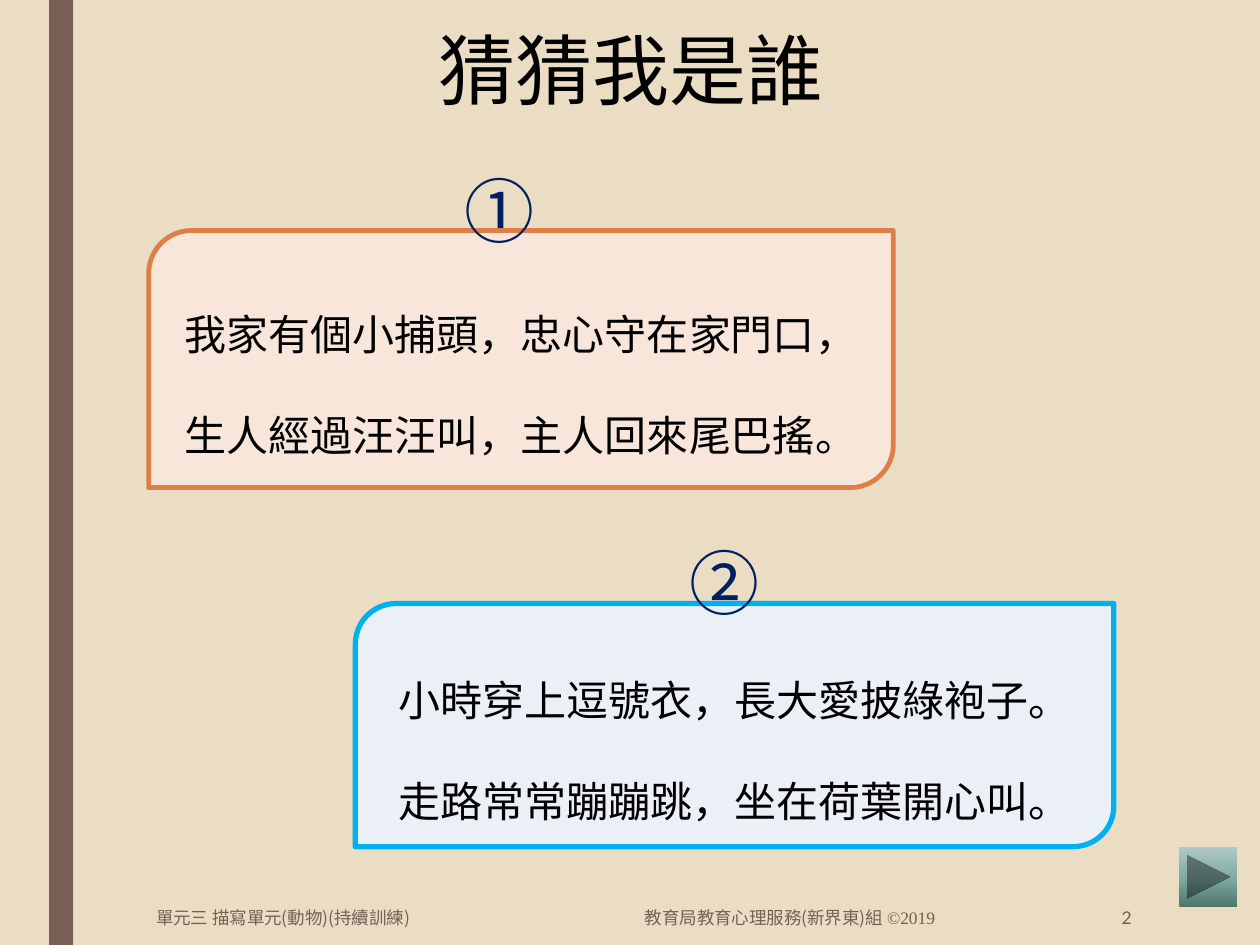
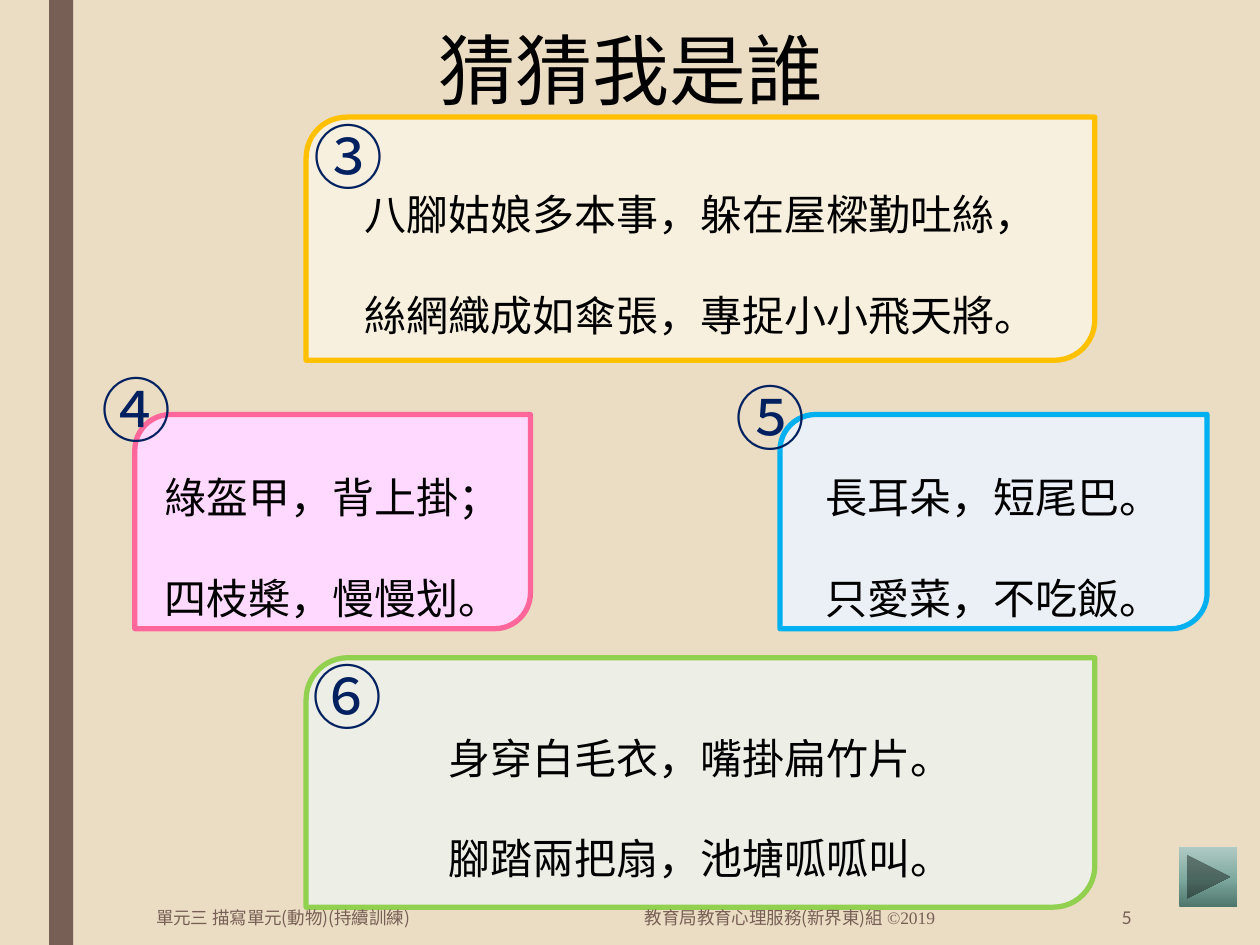
import copy
from dataclasses import dataclass

import pptx
import pptx.dml.color
import pptx.enum.shapes
import pptx.enum.text
import pptx.oxml.ns
import pptx.util
from lxml import etree

SHAPES = pptx.enum.shapes.MSO_SHAPE
ALIGN = pptx.enum.text.PP_ALIGN
ANCHOR = pptx.enum.text.MSO_ANCHOR
QN = pptx.oxml.ns.qn

# The slide is a grid of 100 columns by 75 rows of square cells.
COLUMNS, ROWS = 100, 75
CELL = pptx.util.Inches(0.1)


@dataclass(frozen=True)
class Theme:
    background: str = "EBDDC3"
    brown: str = "775F55"
    ink: str = "000000"
    navy: str = "002060"
    button: tuple = ((0, "4E756C"), (0.48, "7FAAA0"), (1, "B0CAC4"))
    # Card styles: fill, line
    orange: tuple = ("F8E6DA", "DD8047")
    blue: tuple = ("EAF0F6", "00B0F0")
    yellow: tuple = ("F7F0DE", "FFC000")
    pink: tuple = ("FFD9FF", "FF6699")
    green: tuple = ("EDEEE6", "92D050")
    chinese: str = "Noto Sans CJK SC"
    digits: str = "Lato"
    serif: str = "Times New Roman"
    title_size: int = 44
    number_size: int = 40
    riddle_size: int = 24
    footer_size: int = 10


THEME = Theme()


@dataclass(frozen=True)
class Riddle:
    number: str
    number_at: tuple
    card_at: tuple
    style: tuple
    lines: tuple
    line_width: float = 3


RIDDLES = {
    2: (
        Riddle("①", (35.9, 12.8), (11.8, 18.3, 59.1, 20.4), THEME.orange,
               ("我家有個小捕頭，忠心守在家門口，",
                "生人經過汪汪叫，主人回來尾巴搖。"), 2.75),
        Riddle("②", (53.7, 42.3), (28.2, 47.9, 60.2, 19.3), THEME.blue,
               ("小時穿上逗號衣，長大愛披綠袍子。",
                "走路常常蹦蹦跳，坐在荷葉開心叫。")),
    ),
    5: (
        Riddle("③", (23.9, 8.5), (24.3, 9.3, 62.6, 19.3), THEME.yellow,
               ("八腳姑娘多本事，躲在屋樑勤吐絲，",
                "絲網織成如傘張，專捉小小飛天將。")),
        Riddle("④", (7.1, 28.6), (10.7, 32.9, 31.4, 17), THEME.pink,
               ("綠盔甲，背上掛；", "四枝槳，慢慢划。")),
        Riddle("⑤", (57.4, 29.2), (61.9, 32.9, 33.9, 17), THEME.blue,
               ("長耳朵，短尾巴。", "只愛菜，不吃飯。")),
        Riddle("⑥", (23.8, 51.4), (24.3, 52.2, 62.6, 19.8), THEME.green,
               ("身穿白毛衣，嘴掛扁竹片。",
                "腳踏兩把扇，池塘呱呱叫。")),
    ),
}


def color(code):
    return pptx.dml.color.RGBColor.from_string(code)


def place(area):
    return [round(cells * CELL) for cells in area]


def write(box, lines, *, size, ink=THEME.ink, font=THEME.chinese,
          align=ALIGN.LEFT, anchor=ANCHOR.TOP, spacing=None):
    """Fill a box; each line is a string or a list of (text, font) spans."""
    frame = box.text_frame
    frame.word_wrap = True
    frame.vertical_anchor = anchor
    for index, line in enumerate(lines):
        para = frame.paragraphs[0] if index == 0 else frame.add_paragraph()
        para.alignment = align
        para.line_spacing = spacing
        for text, face in [(line, font)] if isinstance(line, str) else line:
            span = para.add_run()
            span.text = text
            span.font.size = pptx.util.Pt(size)
            span.font.name = face
            span.font.color.rgb = color(ink)
            east_asian = etree.SubElement(span.font._element, QN("a:ea"))
            east_asian.set("typeface", face)


def add_text(page, area, lines, **style):
    box = page.shapes.add_textbox(*place(area))
    write(box, lines, **style)
    return box


def add_figure(page, kind, area, fill=None, line=None, width=0):
    figure = page.shapes.add_shape(kind, *place(area))
    figure.shadow.inherit = False
    if fill:
        figure.fill.solid()
        figure.fill.fore_color.rgb = color(fill)
    if line:
        figure.line.color.rgb = color(line)
        figure.line.width = pptx.util.Pt(width)
    else:
        figure.line.fill.background()
    return figure


def add_card(page, riddle):
    card = add_figure(page, SHAPES.ROUND_2_DIAG_RECTANGLE, riddle.card_at,
                      *riddle.style, riddle.line_width)
    write(card, riddle.lines, size=THEME.riddle_size, align=ALIGN.CENTER,
          anchor=ANCHOR.MIDDLE, spacing=2)


def add_number(page, riddle):
    box = add_text(page, (*riddle.number_at, 9.1, 7.7), [riddle.number],
                   size=THEME.number_size, ink=THEME.navy)
    box.text_frame.auto_size = pptx.enum.text.MSO_AUTO_SIZE.SHAPE_TO_FIT_TEXT


def add_next_button(page):
    button = add_figure(page, SHAPES.ACTION_BUTTON_FORWARD_OR_NEXT,
                        (93.6, 67.2, 4.6, 4.8))
    button.fill.gradient()
    button.fill.gradient_angle = 90
    stop_list = button._element.spPr.find(".//" + QN("a:gsLst"))
    stop_list.insert(1, copy.deepcopy(stop_list[0]))
    for stop, (position, code) in zip(button.fill.gradient_stops, THEME.button):
        stop.position = position
        stop.color.rgb = color(code)


def add_footer(page, number):
    credit = [("教育局教育心理服務(新界東)組 ", THEME.chinese),
              ("©2019", THEME.serif)]
    parts = (
        (11.4, 25.9, "單元三 描寫單元(動物)(持續訓練)", ALIGN.LEFT),
        (23.7, 51.5, credit, ALIGN.RIGHT),
        (77.7, 13.1, [(str(number), THEME.digits)], ALIGN.RIGHT),
    )
    for left, width, line, align in parts:
        add_text(page, (left, 70.6, width, 4.4), [line], align=align,
                 size=THEME.footer_size, ink=THEME.brown, anchor=ANCHOR.MIDDLE)


def add_page(deck, number, riddles):
    page = deck.slides.add_slide(deck.slide_layouts[6])
    page.background.fill.solid()
    page.background.fill.fore_color.rgb = color(THEME.background)
    # Side band and title
    add_figure(page, SHAPES.RECTANGLE, (3.9, 0, 1.9, ROWS), THEME.brown)
    add_text(page, (10.7, 2.2, 78.8, 16.2), ["猜猜我是誰"],
             size=THEME.title_size, align=ALIGN.CENTER, spacing=0.89)
    # Riddles, with the numbers above all cards
    for riddle in riddles:
        add_card(page, riddle)
    for riddle in riddles:
        add_number(page, riddle)
    add_next_button(page)
    add_footer(page, number)


def main():
    deck = pptx.Presentation()
    deck.slide_width, deck.slide_height = COLUMNS * CELL, ROWS * CELL
    for number, riddles in RIDDLES.items():
        add_page(deck, number, riddles)
    deck.save("out.pptx")


if __name__ == "__main__":
    main()
